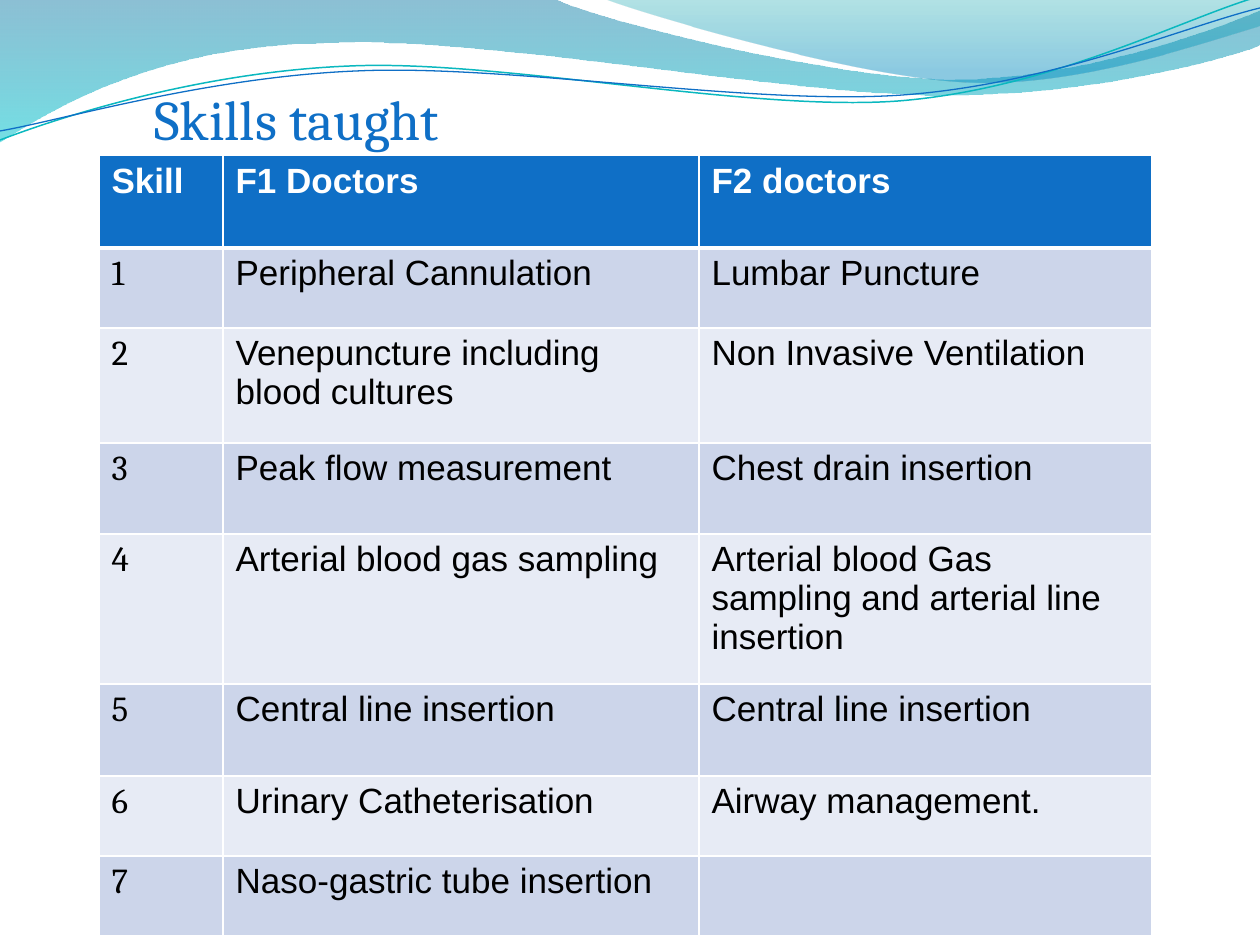
from dataclasses import dataclass

import pptx
import pptx.dml.color
import pptx.oxml
import pptx.oxml.ns
import pptx.util

EMU_PER_PX = 914400 / 126
COLORS = {
    "blue": "0F6FC6", "teal": "0AB8BF", "white": "FFFFFF", "black": "000000",
    "odd_row": "CCD5EA", "even_row": "E7EBF5",
    "deep_blue": "0074A1", "aqua": "00C6CF", "sea": "00A1A9", "sky": "008BBF",
}


@dataclass
class Stop:
    position: float
    color: str
    opacity: int


@dataclass
class Wave:
    """Two numbers in a step are a straight line's end; six are a Bézier curve."""
    start: tuple[int, int]
    steps: list[tuple[int, ...]]
    stops: tuple[Stop, ...] = ()
    line_color: str = ""
    line_width: float = 0


WAVES = [
    Wave((0, 0), [(554, -1), (600, 21, 837, 79, 955, 79), (1075, 79, 1207, 33, 1260, 11),
                  (1261, 45), (1239, 55, 1096, 96, 940, 95), (783, 95, 481, 35, 324, 43),
                  (163, 45, 58, 105, -1, 142)],
         stops=(Stop(0, "deep_blue", 45), Stop(1, "aqua", 55))),
    Wave((604, -1), [(641, 14, 859, 78, 969, 82), (1079, 87, 1211, 40, 1260, 26), (1260, 0)],
         stops=(Stop(0, "sea", 30), Stop(0.8, "sky", 45))),
    Wave((0, 140), [(60, 117, 199, 72, 349, 66), (498, 59, 747, 112, 898, 101),
                    (1050, 89, 1182, 19, 1257, -3)],
         line_color="teal", line_width=0.85),
    Wave((0, 131), [(59, 121, 207, 77, 357, 71), (508, 64, 752, 106, 903, 95),
                    (1053, 84, 1186, 26, 1260, 8)],
         line_color="blue", line_width=0.75),
]

COLUMN_WIDTHS = [124, 476, 453]
ROW_HEIGHTS = [93, 80, 115, 91, 150, 92, 80, 80]
HEADINGS = ("Skill", "F1 Doctors", "F2 doctors")
SKILLS = [
    ("Peripheral Cannulation", "Lumbar Puncture"),
    ("Venepuncture including blood cultures", "Non Invasive Ventilation"),
    ("Peak flow measurement", "Chest drain insertion"),
    ("Arterial blood gas sampling", "Arterial blood Gas sampling and arterial line insertion"),
    ("Central line insertion", "Central line insertion"),
    ("Urinary Catheterisation", "Airway management."),
    ("Naso-gastric tube insertion", ""),
]


def px(length: int) -> pptx.util.Emu:
    return pptx.util.Emu(round(length * EMU_PER_PX))


def rgb(name: str) -> pptx.dml.color.RGBColor:
    return pptx.dml.color.RGBColor.from_string(COLORS[name])


def bend(shape: pptx.shapes.autoshape.Shape, wave: Wave) -> None:
    """Merge each three segments that stand for a curve into one Bézier segment."""
    segments = iter(list(shape._element.iter(pptx.oxml.ns.qn("a:lnTo"))))
    for step in wave.steps:
        parts = [next(segments) for _ in range(len(step) // 2)]
        if len(parts) == 1:
            continue
        curve = pptx.oxml.parse_xml(f'<a:cubicBezTo {pptx.oxml.ns.nsdecls("a")}/>')
        parts[0].addprevious(curve)
        for part in parts:
            curve.append(part[0])
            part.getparent().remove(part)


def draw_wave(slide: pptx.slide.Slide, wave: Wave) -> None:
    points = [(px(step[i]), px(step[i + 1]))
              for step in wave.steps for i in range(0, len(step), 2)]
    builder = slide.shapes.build_freeform(*map(px, wave.start), scale=1.0)
    builder.add_line_segments(points, close=bool(wave.stops))
    shape = builder.convert_to_shape()
    bend(shape, wave)
    shape.shadow.inherit = False
    if not wave.stops:
        shape.fill.background()
        shape.line.color.rgb = rgb(wave.line_color)
        shape.line.width = pptx.util.Pt(wave.line_width)
        return
    shape.line.fill.background()
    shape.fill.gradient()
    shape.fill.gradient_angle = 270
    for gradient_stop, stop in zip(shape.fill.gradient_stops, wave.stops):
        gradient_stop.position = stop.position
        gradient_stop.color.rgb = rgb(stop.color)
    color_tags = shape._element.spPr.iter(pptx.oxml.ns.qn("a:srgbClr"))
    for color_tag, stop in zip(color_tags, wave.stops):
        color_tag.append(pptx.oxml.parse_xml(
            f'<a:alpha {pptx.oxml.ns.nsdecls("a")} val="{stop.opacity * 1000}"/>'))


def style(paragraph: pptx.text.text._Paragraph, font: str, size: int, color: str,
          bold: bool = False) -> None:
    paragraph.font.name = font
    paragraph.font.size = pptx.util.Pt(size)
    paragraph.font.color.rgb = rgb(color)
    paragraph.font.bold = bold


def set_borders(cell: pptx.table._Cell, row: int) -> None:
    """White 1 pt borders, with a 3 pt rule under the header."""
    widths = {"L": 1, "R": 1, "T": 3 if row == 1 else 1, "B": 3 if row == 0 else 1}
    for side, width in widths.items():
        cell._tc.get_or_add_tcPr().append(pptx.oxml.parse_xml(
            f'<a:ln{side} {pptx.oxml.ns.nsdecls("a")} w="{pptx.util.Pt(width)}"><a:solidFill>'
            f'<a:srgbClr val="{COLORS["white"]}"/></a:solidFill></a:ln{side}>'))


def draw_skills(slide: pptx.slide.Slide) -> None:
    rows = [HEADINGS] + [(str(n), *skills) for n, skills in enumerate(SKILLS, 1)]
    table = slide.shapes.add_table(
        len(rows), len(HEADINGS), px(99), px(155),
        px(sum(COLUMN_WIDTHS)), px(sum(ROW_HEIGHTS))).table
    for column, width in zip(table.columns, COLUMN_WIDTHS):
        column.width = px(width)
    for row, (texts, height) in enumerate(zip(rows, ROW_HEIGHTS)):
        table.rows[row].height = px(height)
        header = row == 0
        row_color = "blue" if header else "odd_row" if row % 2 else "even_row"
        for column, text in enumerate(texts):
            cell = table.cell(row, column)
            set_borders(cell, row)
            cell.fill.solid()
            cell.fill.fore_color.rgb = rgb(row_color)
            if text:
                cell.text = text
                font = "Cambria" if column == 0 and not header else "Arial"
                style(cell.text_frame.paragraphs[0], font, 20,
                      "white" if header else "black", header)


def draw_title(slide: pptx.slide.Slide) -> None:
    frame = slide.shapes.add_textbox(px(79), px(78), px(659), px(81)).text_frame
    frame.word_wrap = True
    title = frame.paragraphs[0]
    title.text = "Skills taught"
    title._p.get_or_add_pPr().set("marL", str(px(63)))
    style(title, "Cambria", 32, "blue")


def main() -> None:
    presentation = pptx.Presentation()
    presentation.slide_width, presentation.slide_height = px(1260), px(945)
    slide = presentation.slides.add_slide(presentation.slide_layouts[6])
    for wave in WAVES:
        draw_wave(slide, wave)
    draw_skills(slide)
    draw_title(slide)
    presentation.save("out.pptx")


if __name__ == "__main__":
    main()
